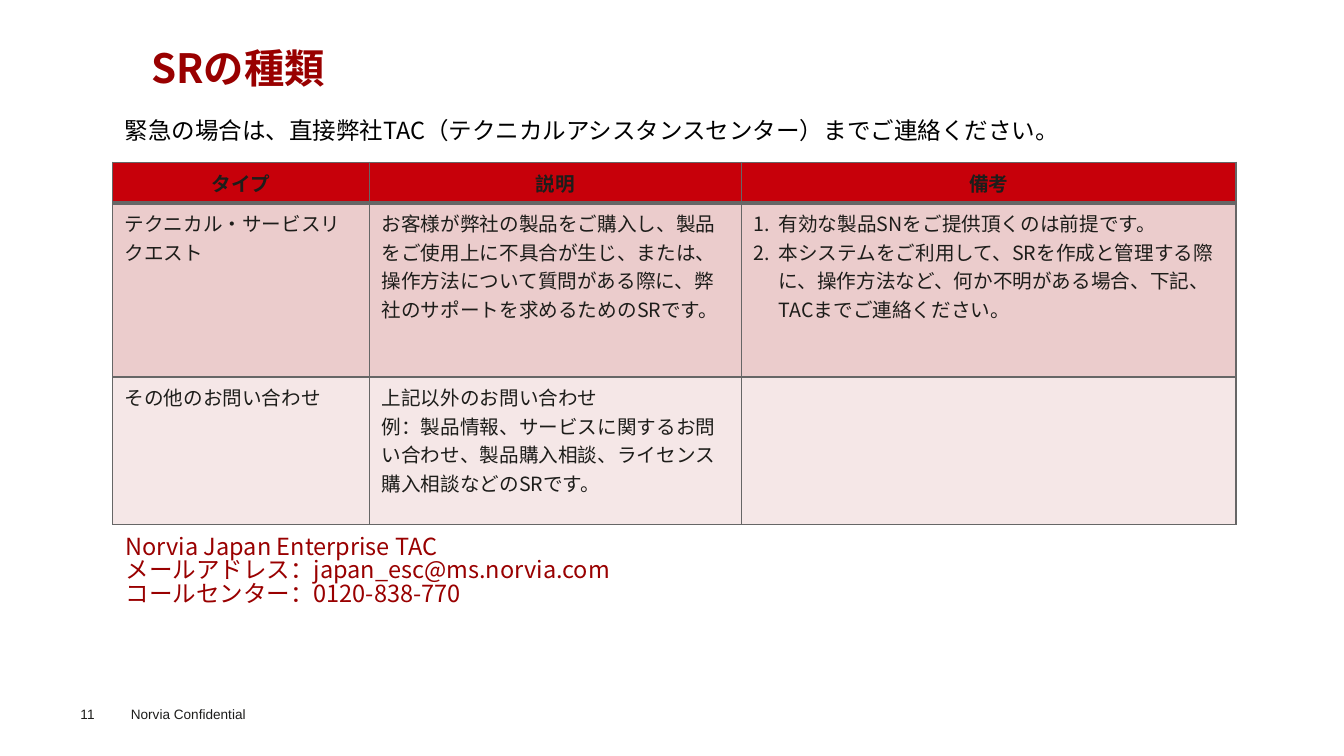
import pptx
import pptx.dml.color
import pptx.enum.text
import pptx.oxml
import pptx.oxml.ns
import pptx.util
from lxml import etree

Cm = pptx.util.Cm
Pt = pptx.util.Pt
qn = pptx.oxml.ns.qn

COLORS = {
    "heading": "990000", "ink": "1D1D1A", "footer": "1D1D1B", "intro": "000000",
    "border": "666666", "header": "C7000A", "first_row": "EBCCCC", "second_row": "F5E7E7",
}
SANS = "Noto Sans CJK JP"
TITLE_FONT = "Noto Sans CJK SC"
INSETS = (0.3, 0.15)
FOOTER_INSETS = (0.25, 0.13)
COLUMN_WIDTHS = (6.48, 9.37, 12.47)
ROW_HEIGHTS = (1.02, 4.39, 3.71)
ROW_FILLS = ("header", "first_row", "second_row")
REQUEST_TYPES = (
    (("タイプ",), ("説明",), ("備考",)),
    (
        ("テクニカル・サービスリクエスト",),
        ("お客様が弊社の製品をご購入し、製品をご使用上に不具合が生じ、または、操作方法について質問がある際に、弊社のサポートを求めるためのSRです。",),
        (
            "有効な製品SNをご提供頂くのは前提です。",
            "本システムをご利用して、SRを作成と管理する際に、操作方法など、何か不明がある場合、下記、TACまでご連絡ください。",
        ),
    ),
    (
        ("その他のお問い合わせ",),
        (
            "上記以外のお問い合わせ",
            "例：製品情報、サービスに関するお問い合わせ、製品購入相談、ライセンス購入相談などのSRです。",
        ),
        (),
    ),
)


class SlideBuilder:
    """Holds the style and the current slide, and adds each kind of element."""

    def __init__(self, slide):
        self.slide = slide

    def color(self, name):
        return pptx.dml.color.RGBColor.from_string(COLORS[name])

    def paragraphs(self, frame, lines, size, color, font=SANS, bold=False,
                   align=pptx.enum.text.PP_ALIGN.LEFT, spacing=None, numbered=False):
        for index, line in enumerate(lines):
            paragraph = frame.paragraphs[0] if index == 0 else frame.add_paragraph()
            paragraph.text = line
            paragraph.alignment = align
            if spacing:
                paragraph.line_spacing = spacing
            if numbered:
                self.number(paragraph)
            paragraph.font.size = Pt(size)
            paragraph.font.bold = bold
            paragraph.font.color.rgb = self.color(color)
            paragraph.font.name = font
            properties = paragraph._p.get_or_add_pPr().find(qn("a:defRPr"))
            etree.SubElement(properties, qn("a:ea")).set("typeface", font)

    def number(self, paragraph):
        properties = paragraph._p.get_or_add_pPr()
        properties.set("marL", str(Cm(0.64)))
        properties.set("indent", str(-Cm(0.64)))
        etree.SubElement(properties, qn("a:buAutoNum")).set("type", "arabicPeriod")

    def text(self, box, lines, size, color, insets=INSETS, **style):
        shape = self.slide.shapes.add_textbox(*(Cm(length) for length in box))
        frame = shape.text_frame
        frame.word_wrap = True
        frame.margin_left = frame.margin_right = Cm(insets[0])
        frame.margin_top = frame.margin_bottom = Cm(insets[1])
        self.paragraphs(frame, lines, size, color, **style)

    def borders(self, cell, widths):
        properties = cell._tc.get_or_add_tcPr()
        for side, width in widths.items():
            line = etree.SubElement(properties, qn(f"a:ln{side}"), w=str(Pt(width)))
            fill = etree.SubElement(line, qn("a:solidFill"))
            etree.SubElement(fill, qn("a:srgbClr")).set("val", COLORS["border"])

    def table(self, left, top, rows):
        table = self.slide.shapes.add_table(
            len(rows), len(COLUMN_WIDTHS), Cm(left), Cm(top),
            Cm(sum(COLUMN_WIDTHS)), Cm(sum(ROW_HEIGHTS))).table
        table.horz_banding = False
        for column, width in zip(table.columns, COLUMN_WIDTHS):
            column.width = Cm(width)
        for row, height in zip(table.rows, ROW_HEIGHTS):
            row.height = Cm(height)
        for row_index, row in enumerate(rows):
            header = row_index == 0
            align = pptx.enum.text.PP_ALIGN.CENTER if header else pptx.enum.text.PP_ALIGN.LEFT
            for column_index, lines in enumerate(row):
                cell = table.cell(row_index, column_index)
                cell.margin_left = cell.margin_right = Cm(INSETS[0])
                cell.margin_top = cell.margin_bottom = Cm(INSETS[1])
                self.borders(cell, {"L": 1, "R": 1, "T": 3 if row_index == 1 else 1,
                                    "B": 3 if header else 1})
                cell.fill.solid()
                cell.fill.fore_color.rgb = self.color(ROW_FILLS[row_index])
                self.paragraphs(cell.text_frame, lines, 14, "ink", bold=header,
                                align=align, numbered=column_index == 2 and not header)


def main():
    presentation = pptx.Presentation()
    presentation.slide_width = Cm(33.88)
    presentation.slide_height = Cm(19.05)
    builder = SlideBuilder(presentation.slides.add_slide(presentation.slide_layouts[6]))

    builder.text((3.05, 17.65, 4.06, 0.69), ["Norvia Confidential"], 9.7, "footer",
                 insets=FOOTER_INSETS, font="Arial")
    builder.text((2.03, 17.78, 1.4, 0.41), ["11"], 9.7, "footer",
                 insets=(0, 0), font="Arial")
    builder.text((3.51, 1.14, 23.04, 1.55), ["SRの種類"], 28.8, "heading",
                 font=TITLE_FONT, bold=True, spacing=0.84)
    builder.table(2.84, 4.09, REQUEST_TYPES)
    builder.text((2.87, 13.36, 28.8, 2.46), [
        "Norvia Japan Enterprise TAC",
        "メールアドレス：japan_esc@ms.norvia.com",
        "コールセンター：0120-838-770",
    ], 16.8, "heading", spacing=0.84)
    builder.text((2.84, 2.9, 28.8, 1.02),
                 ["緊急の場合は、直接弊社TAC（テクニカルアシスタンスセンター）までご連絡ください。"],
                 16.8, "intro", spacing=0.84)
    presentation.save("out.pptx")


if __name__ == "__main__":
    main()
